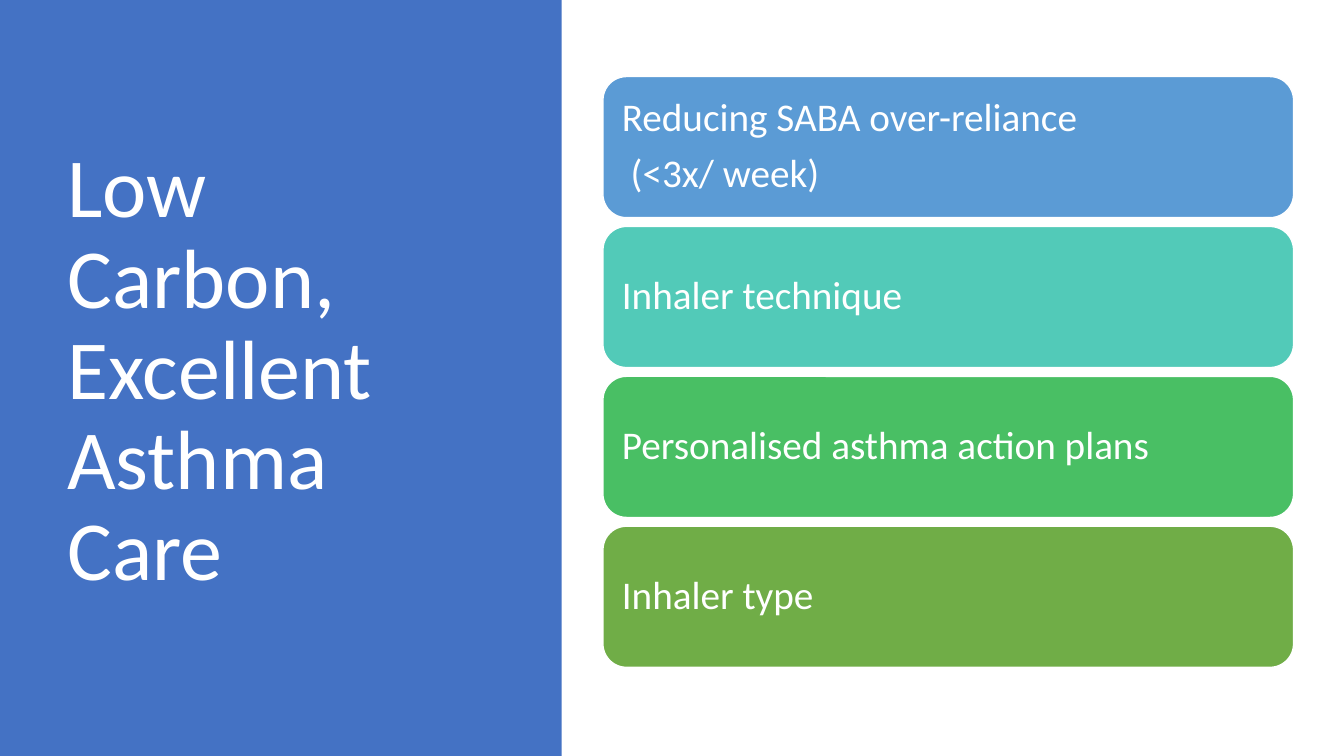
from pptx import Presentation
from pptx.dml.color import RGBColor
from pptx.enum.shapes import MSO_SHAPE
from pptx.enum.text import MSO_ANCHOR, PP_ALIGN
from pptx.util import Inches, Pt

RECTANGLE = MSO_SHAPE.RECTANGLE
ROUNDED = MSO_SHAPE.ROUNDED_RECTANGLE
MIDDLE = MSO_ANCHOR.MIDDLE
LEFT = PP_ALIGN.LEFT

WHITE = RGBColor(0xFF, 0xFF, 0xFF)
BLUE = RGBColor(0x44, 0x72, 0xC4)
SKY = RGBColor(0x5B, 0x9B, 0xD5)
TEAL = RGBColor(0x52, 0xCA, 0xB8)
GREEN = RGBColor(0x49, 0xBF, 0x64)
OLIVE = RGBColor(0x70, 0xAD, 0x47)

FONT = "Calibri"
TITLE = "Low Carbon, Excellent Asthma Care"
MEASURES = [
    (["Reducing SABA over-reliance", " (<3x/ week)"], SKY),
    (["Inhaler technique"], TEAL),
    (["Personalised asthma action plans"], GREEN),
    (["Inhaler type"], OLIVE),
]

SLIDE_WIDTH, SLIDE_HEIGHT = 13.33, 7.5
PANEL_WIDTH = 5.57
CARD_LEFT, CARD_TOP = 5.98, 0.76
CARD_WIDTH, CARD_HEIGHT = 6.85, 1.4
CARD_PITCH = 1.487
CARD_INSET = 0.12


def add_block(slide, preset, left, top, width, height, fill):
    block = slide.shapes.add_shape(
        preset, Inches(left), Inches(top), Inches(width), Inches(height)
    )
    block.shadow.inherit = False
    block.fill.solid()
    block.fill.fore_color.rgb = fill
    return block


def write_lines(frame, lines, size, space_after):
    frame.word_wrap = True
    frame.vertical_anchor = MIDDLE
    for index, line in enumerate(lines):
        paragraph = frame.paragraphs[0] if index == 0 else frame.add_paragraph()
        paragraph.text = line
        paragraph.alignment = LEFT
        paragraph.line_spacing = 0.9
        paragraph.space_after = Pt(space_after)
        paragraph.font.name = FONT
        paragraph.font.size = Pt(size)
        paragraph.font.color.rgb = WHITE


def main():
    deck = Presentation()
    deck.slide_width = Inches(SLIDE_WIDTH)
    deck.slide_height = Inches(SLIDE_HEIGHT)
    slide = deck.slides.add_slide(deck.slide_layouts[6])

    panel = add_block(slide, RECTANGLE, 0, 0, PANEL_WIDTH, SLIDE_HEIGHT, BLUE)
    panel.line.fill.background()

    title = slide.shapes.add_textbox(
        Inches(0.57), Inches(0.68), Inches(4.16), Inches(6.02)
    )
    write_lines(title.text_frame, [TITLE], 60, 0)

    for row, (lines, fill) in enumerate(MEASURES):
        top = CARD_TOP + row * CARD_PITCH
        card = add_block(slide, ROUNDED, CARD_LEFT, top, CARD_WIDTH, CARD_HEIGHT, fill)
        card.line.color.rgb = WHITE
        card.line.width = Pt(1)
        frame = card.text_frame
        frame.margin_left = frame.margin_right = Inches(CARD_INSET)
        frame.margin_top = frame.margin_bottom = Inches(CARD_INSET)
        write_lines(frame, lines, 28, 9.8)

    deck.save("out.pptx")


if __name__ == "__main__":
    main()
